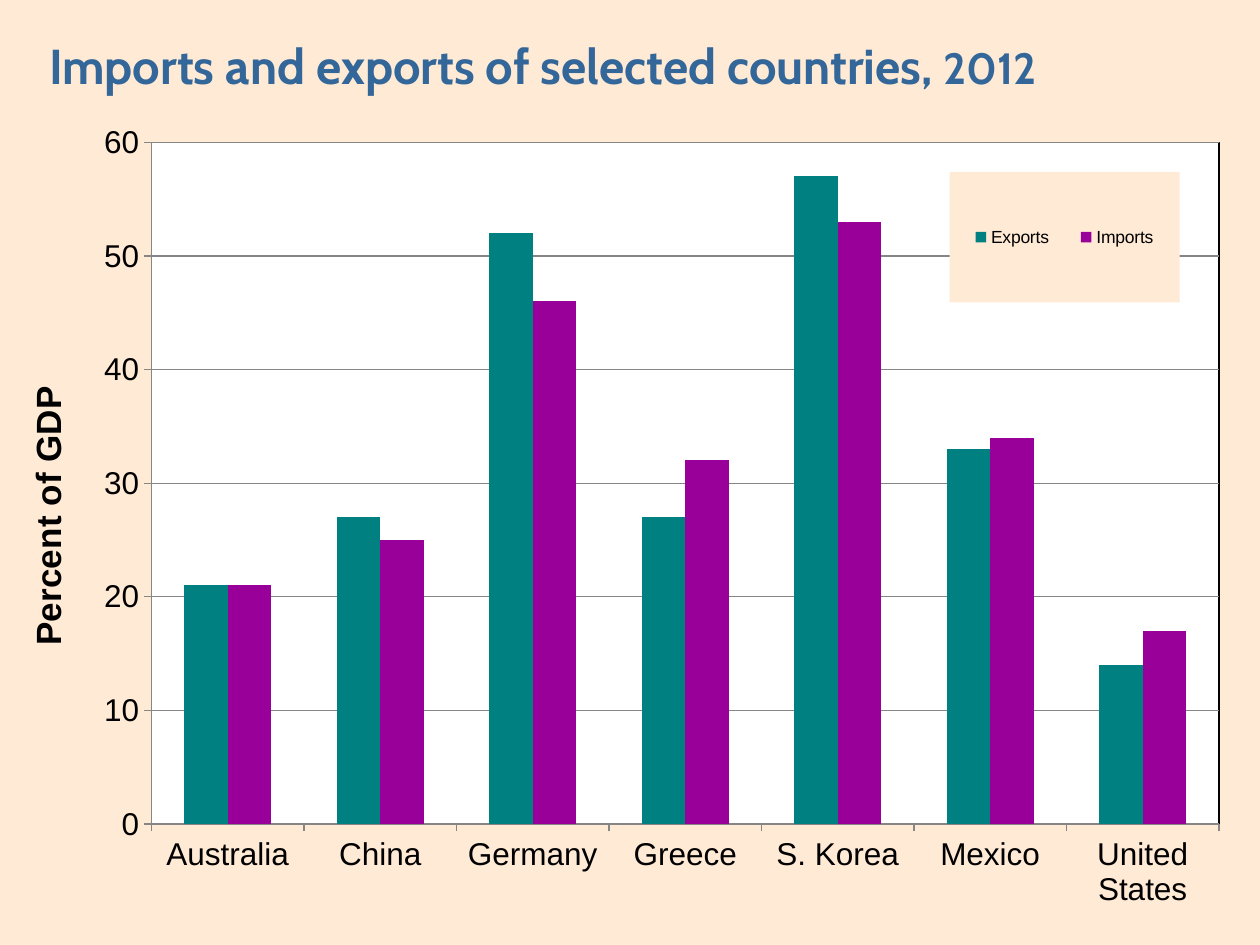
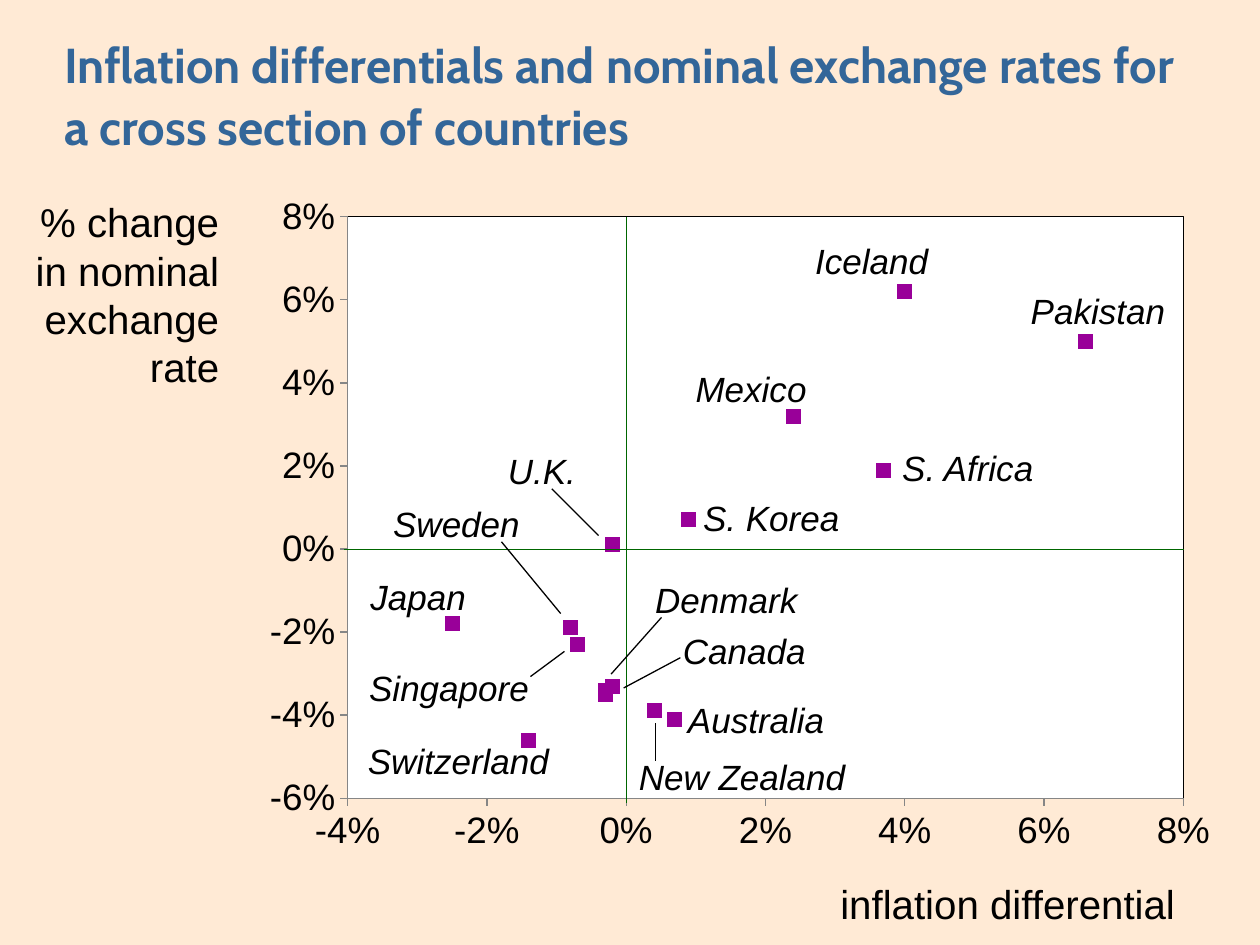
from pptx import Presentation
from pptx import util as u
from pptx.chart import data as chart_data
from pptx.dml.color import RGBColor
from pptx.enum import chart as chart_enum, shapes, text
from pptx.oxml import parse_xml
from pptx.oxml import ns

CREAM = RGBColor(0xFF, 0xEA, 0xD5)
BLUE = RGBColor(0x33, 0x66, 0x99)
TEAL = RGBColor(0x00, 0x80, 0x80)
PURPLE = RGBColor(0x99, 0x00, 0x99)
GREEN = RGBColor(0x00, 0x66, 0x00)
GREY = RGBColor(0x86, 0x86, 0x86)
BLACK = RGBColor(0, 0, 0)
WHITE = RGBColor(0xFF, 0xFF, 0xFF)
TITLE_FONT = "Cabin"
BODY_FONT = "Arial"

COUNTRIES = ["Australia", "China", "Germany", "Greece", "S. Korea", "Mexico", "United States"]
TRADE = [
    ("Exports", TEAL, [21, 27, 52, 27, 57, 33, 14]),
    ("Imports", PURPLE, [21, 25, 46, 32, 53, 34, 17]),
]
RATE_POINTS = [
    (0.007, -0.041), (-0.003, -0.034), (-0.002, -0.033), (0.04, 0.062),
    (-0.025, -0.018), (0.009, 0.007), (0.024, 0.032), (0.004, -0.039),
    (-0.003, -0.035), (0.066, 0.05), (-0.007, -0.023), (0.037, 0.019),
    (-0.008, -0.019), (-0.014, -0.046), (-0.002, 0.001),
]
COUNTRY_LABELS = [
    ("Pakistan", 8.18, 2.3, 1.12),
    ("U.K.", 4.03, 3.57, 0.59),
    ("Singapore", 2.93, 5.29, 1.34),
    ("Switzerland", 2.92, 5.87, 1.53),
    ("Japan", 2.94, 4.57, 0.79),
    ("Sweden", 3.12, 3.99, 1.1),
    ("Iceland", 6.47, 1.9, 0.95),
    ("Mexico", 5.52, 2.92, 0.95),
    ("S. Korea", 5.58, 3.94, 1.2),
    ("S. Africa", 7.16, 3.54, 1.12),
    ("Australia", 5.46, 5.54, 1.15),
    ("Canada", 5.42, 5, 1.02),
    ("Denmark", 5.2, 4.59, 1.2),
    ("New Zealand", 5.07, 6, 1.7),
]
ZERO_LINES = [(2.73, 4.36, 9.4, 4.36), (4.97, 6.37, 4.97, 1.72)]
LEADERS = [
    (4.38, 3.88, 4.75, 4.25),
    (4.21, 5.37, 4.48, 5.17),
    (3.98, 4.3, 4.45, 4.87),
    (5.2, 5.74, 5.2, 6.04),
    (4.85, 5.35, 5.25, 4.9),
    (4.95, 5.46, 5.4, 5.22),
]


def style_font(font, size, color=BLACK, name=BODY_FONT, bold=False, italic=False):
    font.name = name
    font.size = u.Pt(size)
    font.color.rgb = color
    font.bold = bold
    font.italic = italic


def add_slide(presentation):
    slide = presentation.slides.add_slide(presentation.slide_layouts[6])
    slide.background.fill.solid()
    slide.background.fill.fore_color.rgb = CREAM
    return slide


def add_text(slide, box, runs, inset=(0, 0), align=text.PP_ALIGN.LEFT,
             anchor=text.MSO_ANCHOR.TOP, spacing=None, **font_style):
    frame = slide.shapes.add_textbox(*map(u.Inches, box)).text_frame
    frame.word_wrap = True
    frame.vertical_anchor = anchor
    frame.margin_left = frame.margin_right = u.Inches(inset[0])
    frame.margin_top = frame.margin_bottom = u.Inches(inset[1])
    paragraph = frame.paragraphs[0]
    paragraph.alignment = align
    paragraph.line_spacing = spacing
    for words, size in runs:
        run = paragraph.add_run()
        run.text = words
        style_font(run.font, size, **font_style)


def add_title(slide, box, runs):
    add_text(slide, box, runs, anchor=text.MSO_ANCHOR.MIDDLE, spacing=1.05,
             color=BLUE, name=TITLE_FONT, bold=True)


def add_axis_caption(slide, box, words):
    add_text(slide, box, [(words, 23)], inset=(0.1, 0.05), align=text.PP_ALIGN.RIGHT)


def add_line(slide, ends, color):
    line = slide.shapes.add_connector(shapes.MSO_CONNECTOR.STRAIGHT, *map(u.Inches, ends))
    line.line.color.rgb = color
    line.line.width = u.Pt(0.75)
    line._element.spPr.append(parse_xml(f"<a:effectLst {ns.nsdecls('a')}/>"))


def area_format(fill=None, line=None):
    def paint(color):
        if color is None:
            return "<a:noFill/>"
        return f'<a:solidFill><a:srgbClr val="{color}"/></a:solidFill>'

    return parse_xml(f"<c:spPr {ns.nsdecls('c', 'a')}>{paint(fill)}"
                     f'<a:ln w="9525">{paint(line)}</a:ln></c:spPr>')


def manual_layout(box, inner=False):
    target = '<c:layoutTarget val="inner"/>' if inner else ""
    modes = "".join(f'<c:{side}Mode val="edge"/>' for side in "xy")
    sizes = "".join(f'<c:{key} val="{value}"/>' for key, value in zip("xywh", box))
    return parse_xml(f"<c:layout {ns.nsdecls('c')}><c:manualLayout>"
                     f"{target}{modes}{sizes}</c:manualLayout></c:layout>")


def add_chart(slide, kind, box, data, plot_box):
    chart = slide.shapes.add_chart(kind, *map(u.Inches, box), data).chart
    chart.has_title = False
    chart.has_legend = False
    style_font(chart.font, 10)
    chart_space = chart._chartSpace
    chart_space.chart.addnext(area_format())
    plot_area = chart_space.chart.plotArea
    for layout in plot_area.findall(ns.qn("c:layout")):
        plot_area.remove(layout)
    plot_area.insert(0, manual_layout(plot_box, inner=True))
    plot_area.append(area_format(WHITE, BLACK))
    return chart


def style_axis(axis, size, low, high, step, number_format="General"):
    if high is not None:
        axis.minimum_scale, axis.maximum_scale, axis.major_unit = low, high, step
    axis.has_major_gridlines = False
    axis.major_tick_mark = chart_enum.XL_TICK_MARK.OUTSIDE
    axis.minor_tick_mark = chart_enum.XL_TICK_MARK.NONE
    axis.crosses = chart_enum.XL_AXIS_CROSSES.MINIMUM
    axis.tick_labels.number_format = number_format
    axis.tick_labels.number_format_is_linked = False
    style_font(axis.tick_labels.font, size)
    axis.format.line.color.rgb = GREY
    axis.format.line.width = u.Pt(0.75)


def add_legend(chart, box):
    chart.has_legend = True
    legend = chart.legend
    legend.position = chart_enum.XL_LEGEND_POSITION.RIGHT
    legend.include_in_layout = True
    style_font(legend.font, 10)
    element = legend._element
    element.find(ns.qn("c:legendPos")).addnext(manual_layout(box))
    element.find(ns.qn("c:overlay")).addnext(area_format(CREAM))


def add_trade_chart(slide):
    data = chart_data.CategoryChartData()
    data.categories = COUNTRIES
    for name, _, values in TRADE:
        data.add_series(name, values)
    chart = add_chart(slide, chart_enum.XL_CHART_TYPE.COLUMN_CLUSTERED,
                      (0.1, 0.91, 9.76, 6.48), data, (0.113, 0.034, 0.868, 0.835))
    plot = chart.plots[0]
    plot.gap_width = 150
    plot.overlap = 0
    plot.vary_by_categories = False
    for series, (_, color, _) in zip(plot.series, TRADE):
        series.format.fill.solid()
        series.format.fill.fore_color.rgb = color
    style_axis(chart.category_axis, 18, None, None, None)
    value_axis = chart.value_axis
    style_axis(value_axis, 18, 0, 60, 10)
    value_axis.has_major_gridlines = True
    value_axis.major_gridlines.format.line.color.rgb = GREY
    value_axis.major_gridlines.format.line.width = u.Pt(0.75)
    run = value_axis.axis_title.text_frame.paragraphs[0].add_run()
    run.text = "Percent of GDP"
    style_font(run.font, 20, bold=True)
    add_legend(chart, (0.762, 0.07, 0.187, 0.16))


def add_rate_chart(slide):
    data = chart_data.XyChartData()
    points = data.add_series("Series 1")
    for differential, change in RATE_POINTS:
        points.add_data_point(differential, change)
    chart = add_chart(slide, chart_enum.XL_CHART_TYPE.XY_SCATTER,
                      (1.84, 1.52, 7.85, 5.43), data, (0.117, 0.037, 0.845, 0.85))
    chart.plots[0].vary_by_categories = False
    series = chart.plots[0].series[0]
    series.smooth = False
    series.format.line.fill.background()
    marker = series.marker
    marker.style = chart_enum.XL_MARKER_STYLE.SQUARE
    marker.size = 8
    marker.format.fill.solid()
    marker.format.fill.fore_color.rgb = PURPLE
    marker.format.line.color.rgb = PURPLE
    style_axis(chart.category_axis, 21, -0.04, 0.08, 0.02, "0%")
    style_axis(chart.value_axis, 21, -0.06, 0.08, 0.02, "0%")


def build_trade_slide(presentation):
    slide = add_slide(presentation)
    add_trade_chart(slide)
    add_title(slide, (0.39, 0.14, 9.49, 0.72),
              [("Imports and exports of selected countries, ", 28), ("2012", 25)])


def build_rate_slide(presentation):
    slide = add_slide(presentation)
    add_rate_chart(slide)
    add_title(slide, (0.51, 0.26, 9.02, 0.97),
              [("Inflation differentials and nominal exchange rates for "
                "a cross section of countries", 28)])
    add_axis_caption(slide, (0.04, 1.52, 1.8, 1.65), "% change in nominal exchange rate")
    add_axis_caption(slide, (6.17, 6.93, 3.26, 0.49), "inflation differential")
    for ends in ZERO_LINES:
        add_line(slide, ends, GREEN)
    for country, left, top, width in COUNTRY_LABELS:
        add_text(slide, (left, top, width, 0.34), [(country, 20)], italic=True)
    for ends in LEADERS:
        add_line(slide, ends, BLACK)


def main():
    presentation = Presentation()
    presentation.slide_width = u.Inches(10)
    presentation.slide_height = u.Inches(7.5)
    build_trade_slide(presentation)
    build_rate_slide(presentation)
    presentation.save("out.pptx")


if __name__ == "__main__":
    main()
